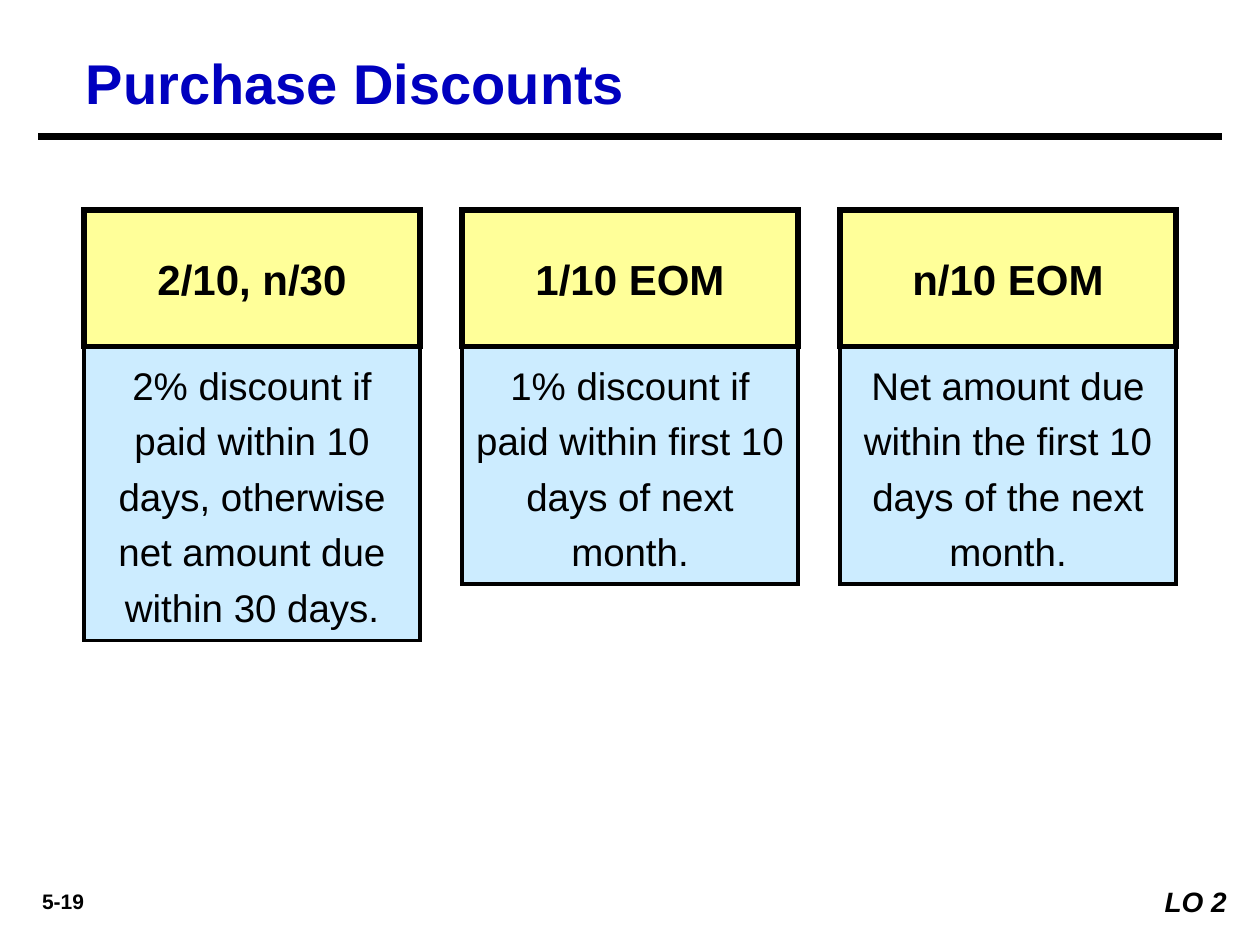
import pptx
import pptx.util
import pptx.dml.color
import pptx.enum.shapes
import pptx.enum.text
import pptx.oxml.ns
from lxml import etree

Pt = pptx.util.Pt
ALIGN = pptx.enum.text.PP_ALIGN
ANCHOR = pptx.enum.text.MSO_ANCHOR
COLORS = {
    "ink": "000000",
    "title": "0000BF",
    "terms": "FFFF99",
    "meaning": "CCECFF",
    "paper": "FFFFFF",
}
DISCOUNTS = [
    ("2/10, n/30", "2% discount if paid within 10 days, otherwise net amount due within 30 days.", 168),
    ("1/10 EOM", "1% discount if paid within first 10 days of next month.", 136),
    ("n/10 EOM", "Net amount due within the first 10 days of the next month.", 136),
]


def color(name):
    return pptx.dml.color.RGBColor.from_string(COLORS[name])


def draw_line(shape, width):
    shape.line.color.rgb = color("ink")
    shape.line.width = Pt(width)
    outline = shape.element.spPr.find(pptx.oxml.ns.qn("a:ln"))
    outline.set("cap", "sq")
    etree.SubElement(outline, pptx.oxml.ns.qn("a:miter"), lim="800000")


def write(shape, text, size, align, anchor=ANCHOR.TOP, ink="ink", bold=False, italic=False):
    frame = shape.text_frame
    frame.word_wrap = True
    frame.vertical_anchor = anchor
    paragraph = frame.paragraphs[0]
    paragraph.alignment = align
    run = paragraph.add_run()
    run.text = text
    run.font.name = "Arial"
    run.font.size = Pt(size)
    run.font.bold = bold
    run.font.italic = italic
    run.font.color.rgb = color(ink)
    return paragraph


def add_box(slide, box, fill, line_width=0):
    shape = slide.shapes.add_shape(pptx.enum.shapes.MSO_SHAPE.RECTANGLE, *map(Pt, box))
    shape.shadow.inherit = False
    shape.fill.solid()
    shape.fill.fore_color.rgb = color(fill)
    if line_width:
        draw_line(shape, line_width)
    else:
        shape.line.fill.background()
    return shape


def add_header(slide, left, top, width, height):
    title = slide.shapes.add_textbox(Pt(left + 18), Pt(top), Pt(width - 72), Pt(44))
    write(title, "Purchase Discounts", 32, ALIGN.LEFT, ink="title", bold=True)
    bottom = Pt(top + height)
    rule = slide.shapes.add_connector(
        pptx.enum.shapes.MSO_CONNECTOR.STRAIGHT, Pt(left), bottom, Pt(left + width), bottom
    )
    draw_line(rule, 4.5)
    etree.SubElement(rule.element.spPr, pptx.oxml.ns.qn("a:effectLst"))


def add_discount(slide, left, top, width, terms, meaning, meaning_height):
    terms_height = 78
    meaning_box = add_box(slide, (left, top + terms_height, width, meaning_height), "meaning", 2.25)
    paragraph = write(meaning_box, meaning, 22, ALIGN.CENTER)
    paragraph.line_spacing = 1.2
    terms_box = add_box(slide, (left, top, width, terms_height), "terms", 3)
    write(terms_box, terms, 24, ALIGN.CENTER, ANCHOR.MIDDLE, bold=True)


def add_discounts(slide, left, top, width, gap):
    column_width = (width - gap * (len(DISCOUNTS) - 1)) / len(DISCOUNTS)
    for index, discount in enumerate(DISCOUNTS):
        add_discount(slide, left + index * (column_width + gap), top, column_width, *discount)


def add_footer(slide, left, top, width, height):
    number = slide.shapes.add_textbox(Pt(left), Pt(top + 2), Pt(60), Pt(22))
    write(number, "5-19", 12, ALIGN.CENTER, bold=True)
    objective = add_box(slide, (left + width - 60, top, 60, height), "paper")
    write(objective, "LO 2", 16, ALIGN.RIGHT, bold=True, italic=True)


def main():
    presentation = pptx.Presentation()
    presentation.slide_width = Pt(720)
    presentation.slide_height = Pt(540)
    slide = presentation.slides.add_slide(presentation.slide_layouts[6])
    add_header(slide, 24, 24, 672, 54)
    add_discounts(slide, 48, 120, 624, 24)
    add_footer(slide, 6, 502, 702, 26)
    presentation.save("out.pptx")


if __name__ == "__main__":
    main()
